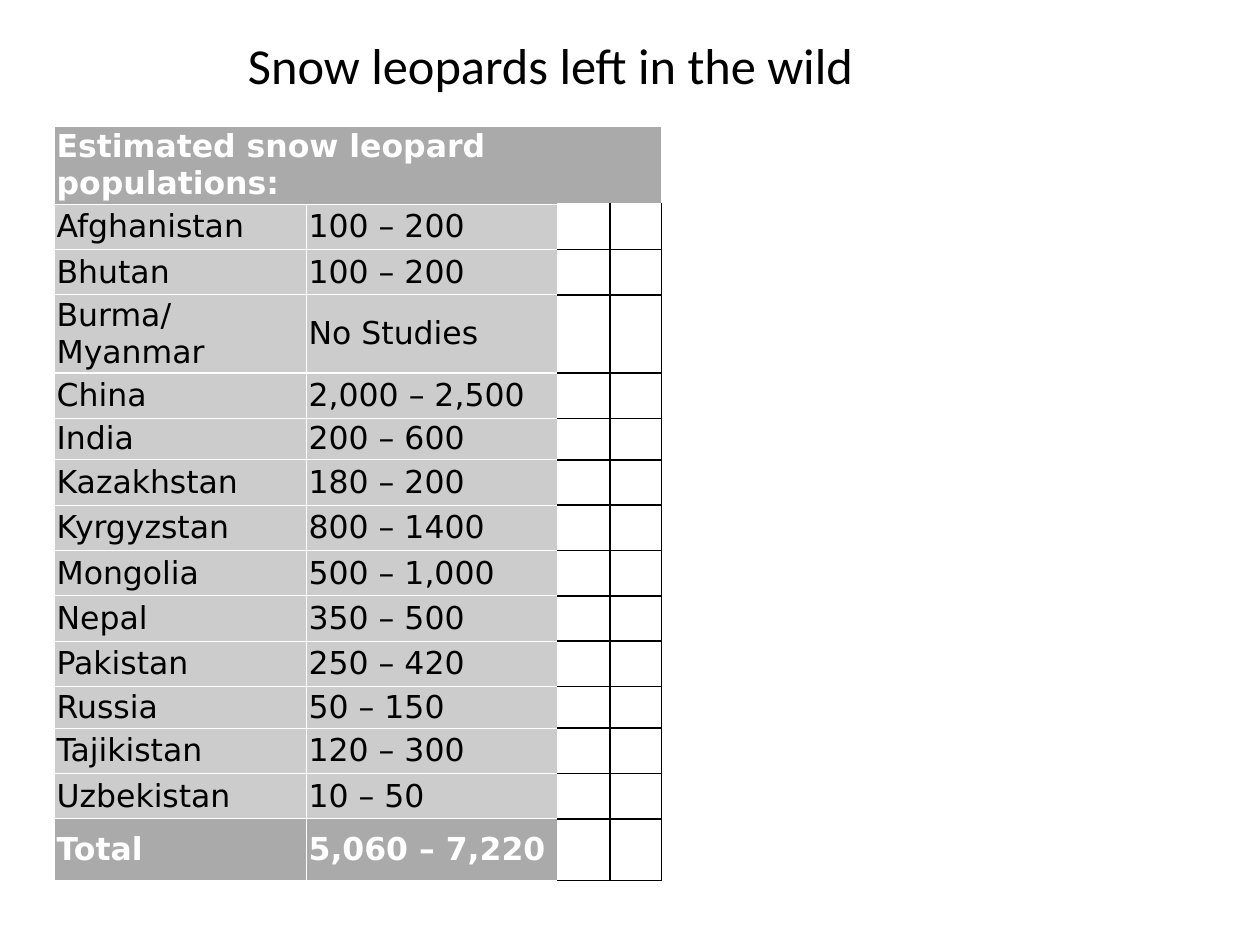
from lxml import etree
from pptx import Presentation
from pptx import util as u
from pptx.dml.color import RGBColor
from pptx.enum import text
from pptx.oxml.ns import qn

COLORS = {"light": "FFFFFF", "dark": "000000", "band": "AAAAAA", "body": "CCCCCC"}
COLUMNS = [2, 2, 0.41, 0.41]
ROW = 0.36
ROW_HEIGHTS = {"header": 0.61, "Burma/Myanmar": 0.62, "India": 0.33, "Russia": 0.33, "Total": 0.49}
HEADING = "Estimated snow leopard populations:"
POPULATIONS = [
    ("Afghanistan", "100 – 200"),
    ("Bhutan", "100 – 200"),
    ("Burma/Myanmar", "No Studies"),
    ("China", "2,000 – 2,500"),
    ("India", "200 – 600"),
    ("Kazakhstan", "180 – 200"),
    ("Kyrgyzstan", "800 – 1400"),
    ("Mongolia", "500 – 1,000"),
    ("Nepal", "350 – 500"),
    ("Pakistan", "250 – 420"),
    ("Russia", "50 – 150"),
    ("Tajikistan", "120 – 300"),
    ("Uzbekistan", "10 – 50"),
    ("Total", "5,060 – 7,220"),
]


def color(name):
    """Return the named colour as an RGBColor."""
    return RGBColor.from_string(COLORS[name])


def style_font(para, face, size, shade, bold=False):
    """Set the font of a whole paragraph."""
    para.font.name, para.font.size, para.font.bold = face, u.Pt(size), bold
    para.font.color.rgb = color(shade)


def set_borders(cell, shades, points):
    """Draw the left, right, top and bottom borders of a cell."""
    properties = cell._tc.get_or_add_tcPr()
    for place, (side, shade) in enumerate(zip("LRTB", shades)):
        line = etree.Element(qn(f"a:ln{side}"), w=str(u.Pt(points)))
        fill = etree.SubElement(line, qn("a:solidFill"))
        etree.SubElement(fill, qn("a:srgbClr"), val=COLORS[shade])
        properties.insert(place, line)


def format_cell(cell, words, is_band):
    """Fill a cell with its text and its band or body look."""
    cell.text = words
    style_font(cell.text_frame.paragraphs[0], "DejaVu Sans", 18, "light" if is_band else "dark", is_band)
    cell.fill.solid()
    cell.fill.fore_color.rgb = color("band" if is_band else "body")
    set_borders(cell, ["light"] * 4, 0.75)


def format_spare_cell(cell, is_first_column, is_first_row):
    """Leave a cell empty with a dark grid around it."""
    cell.fill.background()
    cell.text_frame.paragraphs[0].font.size = u.Pt(12)
    left, top = ("light" if edge else "dark" for edge in (is_first_column, is_first_row))
    set_borders(cell, [left, "dark", top, "dark"], 1)


def add_title(page, words):
    """Place and format the title placeholder."""
    title = page.shapes.title
    title.left, title.top, title.width, title.height = map(u.Inches, (1.77, 0, 5.2, 1.02))
    title.text = words
    title.text_frame.vertical_anchor = text.MSO_ANCHOR.MIDDLE
    para = title.text_frame.paragraphs[0]
    para.alignment = text.PP_ALIGN.CENTER
    style_font(para, "Calibri", 28.8, "dark")


def add_population_table(page):
    """Build the table of population estimates by country."""
    names = ["header"] + [country for country, _ in POPULATIONS]
    heights = [ROW_HEIGHTS.get(name, ROW) for name in names]
    frame = page.shapes.add_table(len(names), len(COLUMNS), u.Inches(0.43), u.Inches(1),
                                  u.Inches(sum(COLUMNS)), u.Inches(sum(heights)))
    table = frame.table
    table.first_row = table.horz_banding = False
    for column, width in zip(table.columns, COLUMNS):
        column.width = u.Inches(width)
    for row, height in zip(table.rows, heights):
        row.height = u.Inches(height)
    for cell in table.iter_cells():
        cell.margin_left = cell.margin_right = cell.margin_top = cell.margin_bottom = u.Inches(0.02)
        cell.vertical_anchor = text.MSO_ANCHOR.MIDDLE
    table.cell(0, 0).merge(table.cell(0, len(COLUMNS) - 1))
    format_cell(table.cell(0, 0), HEADING, True)
    for index, entry in enumerate(POPULATIONS, 1):
        for column in range(len(COLUMNS)):
            cell = table.cell(index, column)
            if column < len(entry):
                format_cell(cell, entry[column], entry[0] == "Total")
            else:
                format_spare_cell(cell, column == len(entry), index == 1)


def main():
    """Build and save the slide."""
    deck = Presentation()
    deck.slide_width, deck.slide_height = u.Inches(10), u.Inches(7.5)
    page = deck.slides.add_slide(deck.slide_layouts.get_by_name("Title Only"))
    add_title(page, "Snow leopards left in the wild")
    add_population_table(page)
    deck.save("out.pptx")


if __name__ == "__main__":
    main()
